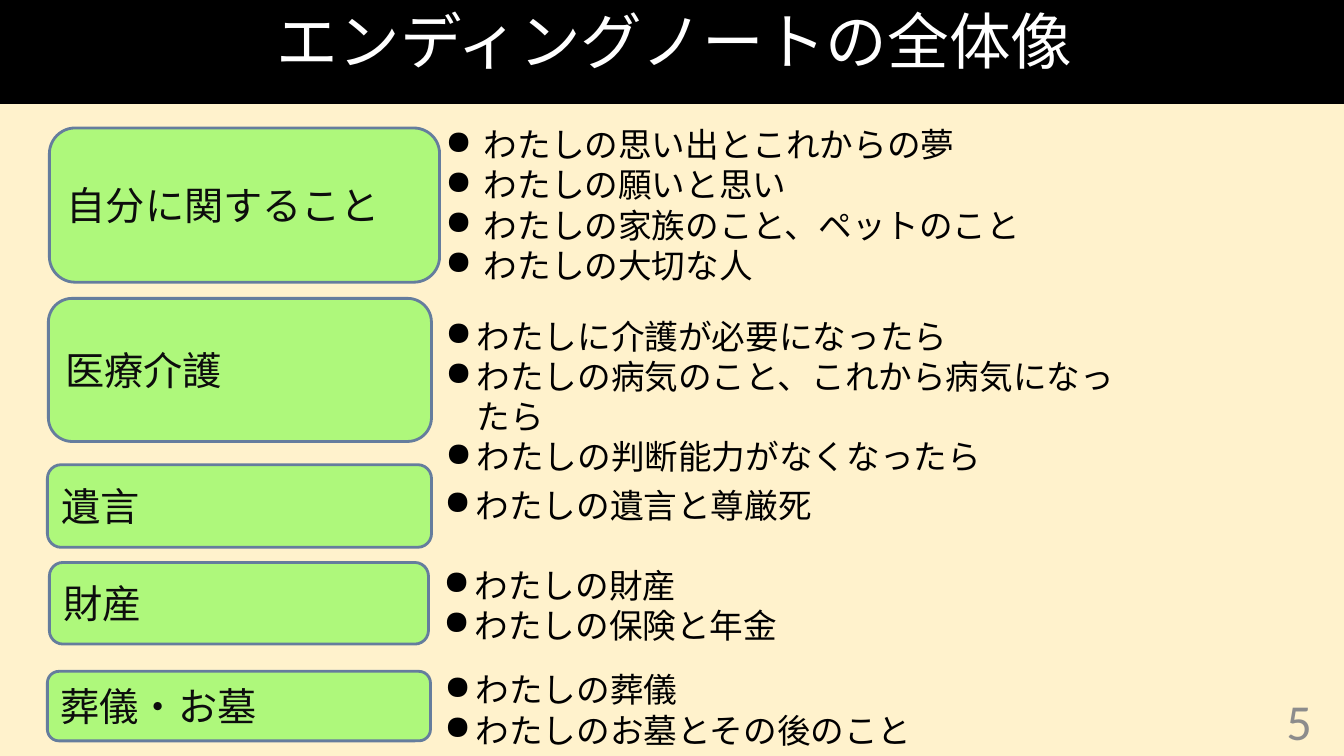
from lxml import etree
from pptx import Presentation
from pptx import util as u
from pptx.dml.color import RGBColor
from pptx.enum import shapes, text
from pptx.oxml.ns import qn

PX = 9144  # EMU per px, 100 px to the inch
CREAM = RGBColor(0xFF, 0xF2, 0xCC)
BLACK = RGBColor(0, 0, 0)
WHITE = RGBColor(0xFF, 0xFF, 0xFF)
GREEN = RGBColor(0x66, 0xFF, 0x33)
SLATE = RGBColor(0x65, 0x7D, 0x9D)
INK = RGBColor(0x0D, 0x0D, 0x0D)
GREY = RGBColor(0x8C, 0x8C, 0x8C)

# label, label box, list box, list font, list indent, items
SECTIONS = [
    ("自分に関すること", (49, 127, 387, 153), (432, 118, 655, 172), "Arial", 38,
     ["わたしの思い出とこれからの夢", "わたしの願いと思い",
      "わたしの家族のこと、ペットのこと", "わたしの大切な人"]),
    ("医療介護", (48, 296, 380, 142), (432, 308, 709, 131), "Calibri", 31,
     ["わたしに介護が必要になったら", "わたしの病気のこと、これから病気になったら",
      "わたしの判断能力がなくなったら"]),
    ("遺言", (47, 461, 381, 82), (431, 476, 533, 50), "Calibri", 31,
     ["わたしの遺言と尊厳死"]),
    ("財産", (49, 558, 376, 81), (430, 555, 416, 91), "Calibri", 31,
     ["わたしの財産", "わたしの保険と年金"]),
    ("葬儀・お墓", (47, 666, 380, 69), (431, 659, 524, 91), "Calibri", 31,
     ["わたしの葬儀", "わたしのお墓とその後のこと"]),
]


def emu(box):
    return [v * PX for v in box]


def write(p, words, size, color, align=text.PP_ALIGN.LEFT, font="Calibri"):
    p.text = words
    p.alignment = align
    p.font.size = u.Pt(size)
    p.font.name = font
    p.font.color.rgb = color


def add_block(s, kind, box, fill):
    sp = s.shapes.add_shape(kind, *emu(box))
    sp.shadow.inherit = False
    sp.fill.solid()
    sp.fill.fore_color.rgb = fill
    sp.text_frame.word_wrap = True
    sp.text_frame.vertical_anchor = text.MSO_ANCHOR.MIDDLE
    return sp


def add_title(s, box, words):
    sp = add_block(s, shapes.MSO_SHAPE.RECTANGLE, box, BLACK)
    sp.line.fill.background()
    p = sp.text_frame.paragraphs[0]
    write(p, words, 44, WHITE, text.PP_ALIGN.CENTER)
    p.line_spacing = 0.9


def add_label(s, box, words):
    sp = add_block(s, shapes.MSO_SHAPE.ROUNDED_RECTANGLE, box, GREEN)
    sp.line.color.rgb = SLATE
    sp.line.width = u.Pt(2)
    # Translucent fill
    color = sp.fill._xPr.find(qn("a:solidFill"))[0]
    etree.SubElement(color, qn("a:alpha"), val="53000")
    write(sp.text_frame.paragraphs[0], words, 28, INK)


def add_list(s, box, items, font, indent):
    tf = s.shapes.add_textbox(*emu(box)).text_frame
    tf.word_wrap = True
    tf.auto_size = text.MSO_AUTO_SIZE.SHAPE_TO_FIT_TEXT
    for i, item in enumerate(items):
        p = tf.add_paragraph() if i else tf.paragraphs[0]
        write(p, item, 24, BLACK, font=font)
        # Hanging bullet
        pPr = p._p.get_or_add_pPr()
        pPr.set("marL", str(indent * PX))
        pPr.set("indent", str(-indent * PX))
        bullet = etree.Element(qn("a:buChar"), char="●")
        pPr.insert(0, bullet)


def add_page_number(s, box, number):
    tf = s.shapes.add_textbox(*emu(box)).text_frame
    tf.word_wrap = True
    tf.vertical_anchor = text.MSO_ANCHOR.MIDDLE
    write(tf.paragraphs[0], number, 36, GREY, text.PP_ALIGN.RIGHT)


def main():
    prs = Presentation()
    prs.slide_width, prs.slide_height = emu((1333, 750))
    s = prs.slides.add_slide(prs.slide_layouts[6])
    s.background.fill.solid()
    s.background.fill.fore_color.rgb = CREAM

    add_title(s, (0, -15, 1339, 118), "エンディングノートの全体像")
    for label, label_box, list_box, font, indent, items in SECTIONS:
        add_label(s, label_box, label)
        add_list(s, list_box, items, font, indent)
    add_page_number(s, (1011, 695, 300, 40), "5")
    prs.save("out.pptx")


if __name__ == "__main__":
    main()
